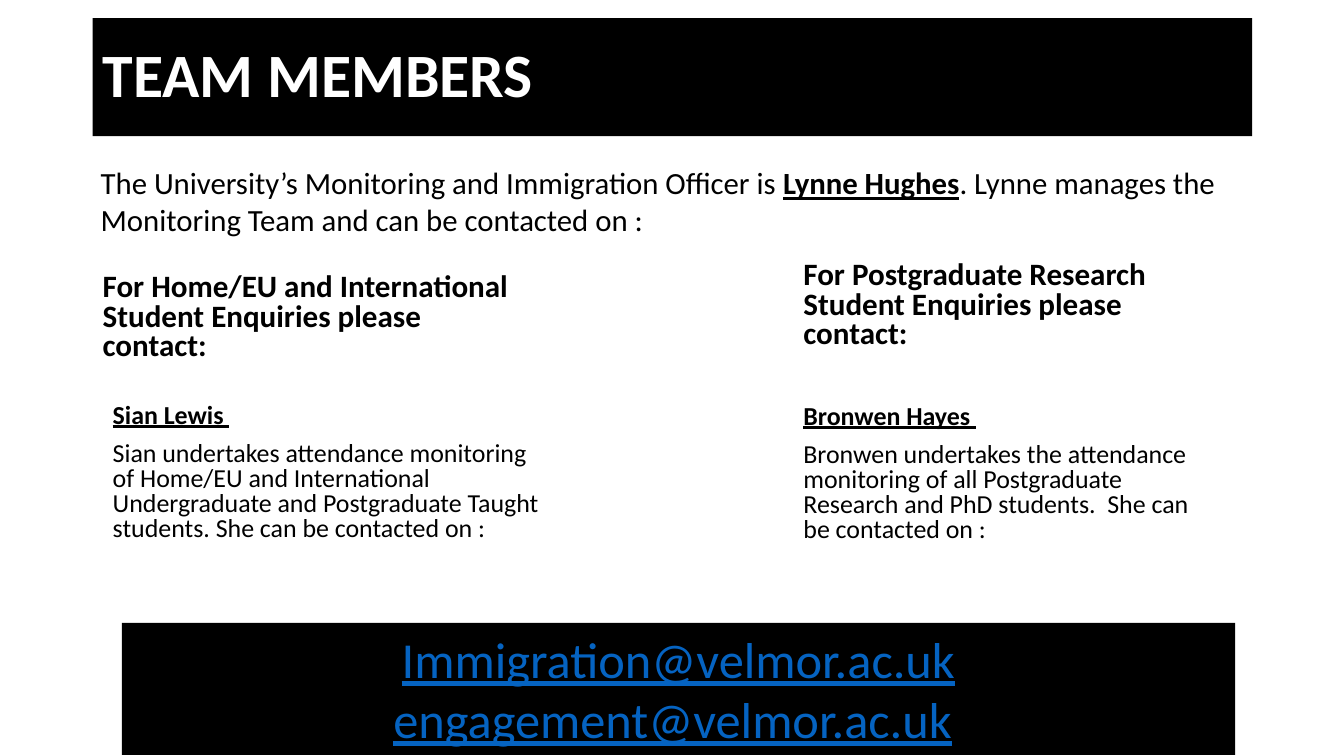
import pptx
import pptx.util
import pptx.dml.color
import pptx.enum.shapes
import pptx.enum.text

Inches = pptx.util.Inches
ANCHOR = pptx.enum.text.MSO_ANCHOR
BLACK = pptx.dml.color.RGBColor(0x00, 0x00, 0x00)
WHITE = pptx.dml.color.RGBColor(0xFF, 0xFF, 0xFF)
LINK_BLUE = pptx.dml.color.RGBColor(0x05, 0x63, 0xC1)

deck = pptx.Presentation()
deck.slide_width = Inches(13.33)
deck.slide_height = Inches(7.5)
page = deck.slides.add_slide(deck.slide_layouts[6])


def add_box(left, top, width, height, anchor=ANCHOR.TOP, band=False):
    """Add a wrapping text box, or a black band, and return its text frame."""
    place = [Inches(length) for length in (left, top, width, height)]
    if band:
        box = page.shapes.add_shape(pptx.enum.shapes.MSO_SHAPE.RECTANGLE, *place)
        box.shadow.inherit = False
        box.fill.solid()
        box.fill.fore_color.rgb = BLACK
        box.line.fill.background()
    else:
        box = page.shapes.add_textbox(*place)
    box.text_frame.word_wrap = True
    box.text_frame.vertical_anchor = anchor
    return box.text_frame


def add_span(para, text, size, color=BLACK, bold=False, underline=False):
    span = para.add_run()
    span.text = text
    span.font.name = "Calibri"
    span.font.size = pptx.util.Pt(size)
    span.font.color.rgb = color
    span.font.bold = bold
    span.font.underline = underline


# Title band
title = add_box(0.92, 0.18, 11.5, 1.17, ANCHOR.MIDDLE, band=True).paragraphs[0]
title.alignment = pptx.enum.text.PP_ALIGN.LEFT
title.line_spacing = 0.9
add_span(title, "TEAM MEMBERS", 44, WHITE, bold=True)

# Introduction
intro = add_box(0.9, 1.58, 11.38, 0.84).paragraphs[0]
add_span(intro, "The University’s Monitoring and Immigration Officer is ", 22)
add_span(intro, "Lynne Hughes", 22, bold=True, underline=True)
add_span(intro, ". Lynne manages the Monitoring Team and can be contacted on :", 22)

# Headings above the two contacts
headings = [
    ((0.92, 2.52, 4.31, 1.13),
     "For Home/EU and International Student Enquiries please contact:"),
    ((7.87, 2.49, 4.19, 1.04),
     "For Postgraduate Research Student Enquiries please contact:"),
]
for place, text in headings:
    para = add_box(*place, anchor=ANCHOR.BOTTOM).paragraphs[0]
    para.line_spacing = 0.8
    para.space_before = pptx.util.Pt(10)
    add_span(para, text, 22.2, bold=True)

# Contacts: name, then duties
contacts = [
    ((1.02, 3.96, 4.44, 1.78), "Sian Lewis ",
     "Sian undertakes attendance monitoring of Home/EU and International "
     "Undergraduate and Postgraduate Taught students. She can be contacted on :"),
    ((7.87, 3.97, 4.19, 1.77), "Bronwen Hayes ",
     "Bronwen undertakes the attendance monitoring of all Postgraduate "
     "Research and PhD students.  She can be contacted on :"),
]
for place, name, duties in contacts:
    frame = add_box(*place)
    name_para, duties_para = frame.paragraphs[0], frame.add_paragraph()
    for para in (name_para, duties_para):
        para.line_spacing = 0.8
        para.space_before = pptx.util.Pt(10)
    add_span(name_para, name, 18.5, bold=True, underline=True)
    add_span(duties_para, duties, 18.5)

# E-mail band
emails = add_box(1.21, 6.18, 11.04, 1.31, band=True)
first, second = emails.paragraphs[0], emails.add_paragraph()
for para, address in ((first, "Immigration@velmor.ac.uk"),
                      (second, "engagement@velmor.ac.uk")):
    para.alignment = pptx.enum.text.PP_ALIGN.CENTER
    add_span(para, address, 36, LINK_BLUE, underline=True)
add_span(second, " ", 36, WHITE)

deck.save("out.pptx")
